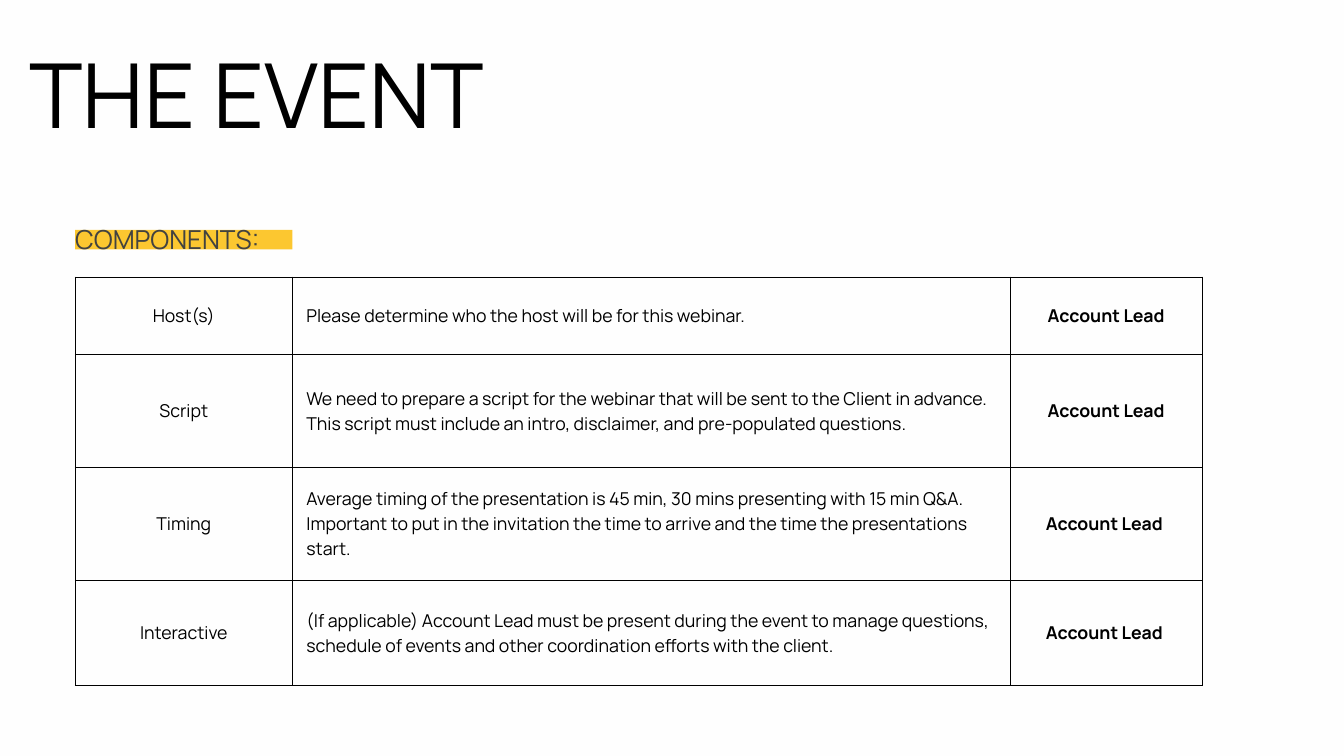
from dataclasses import dataclass

from lxml.etree import SubElement
from pptx import Presentation
from pptx.dml.color import RGBColor as Color
from pptx.enum.shapes import MSO_SHAPE as Shape
from pptx.enum.text import MSO_ANCHOR as Anchor, MSO_AUTO_SIZE as AutoSize, PP_ALIGN as Align
from pptx.oxml.ns import qn
from pptx.util import Emu, Pt

TITLE = "THE EVENT"
HEADING = "COMPONENTS:"
COMPONENTS = [
    ("Host(s)", "Please determine who the host will be for this webinar.", "Account Lead"),
    ("Script", "We need to prepare a script for the webinar that will be sent to the Client in advance. "
               "This script must include an intro, disclaimer, and pre-populated questions.", "Account Lead"),
    ("Timing", "Average timing of the presentation is 45 min, 30 mins presenting with 15 min Q&A. "
               "Important to put in the invitation the time to arrive and the time the presentations start.",
     "Account Lead "),
    ("Interactive", "(If applicable) Account Lead must be present during the event to manage questions, "
                    "schedule of events and other coordination efforts with the client.", "Account Lead "),
]


@dataclass(frozen=True)
class Theme:
    font: str = "Manrope"
    background: str = "FEFEFE"
    ink: str = "000000"
    heading_ink: str = "424240"
    highlight: str = "FCC730"
    title_size: float = 96
    title_leading: float = 105.6
    heading_size: float = 28
    heading_leading: float = 35
    cell_size: float = 19
    cell_leading: float = 26.6
    border: float = 0.75


THEME = Theme()

# Layout in px, 100 to the inch
PAGE_SIZE = (2000, 1125)
TITLE_BOX = (44, 71, 1062, 159)
TABLE_LEFT, TABLE_TOP = 112, 412
COLUMNS = [323, 1068, 286]
ROWS = [115, 168, 168, 157]
ALIGNMENTS = [Align.CENTER, Align.LEFT, Align.CENTER]
CELL_MARGIN = 21
HIGHLIGHT_BOX = (TABLE_LEFT, 342, COLUMNS[0], 29)
HEADING_BOX = (TABLE_LEFT, 331, sum(COLUMNS), 49)


def px(length):
    return Emu(length * 9144)


def place(shape, area):
    shape.left, shape.top, shape.width, shape.height = map(px, area)


def set_margins(owner, margin):
    owner.margin_left = owner.margin_top = owner.margin_right = owner.margin_bottom = px(margin)


def write(frame, text, size, leading, color, align=Align.LEFT, bold=False):
    para = frame.paragraphs[0]
    para.alignment = align
    para.line_spacing = Pt(leading)
    para.space_before = para.space_after = Pt(0)
    span = para.add_run()
    span.text = text
    font = span.font
    font.name, font.size, font.bold = THEME.font, Pt(size), bold
    font.color.rgb = Color.from_string(color)


def write_box(box, *content):
    """Write one line at the top left of a box without margins."""
    frame = box.text_frame
    frame.word_wrap = True
    frame.auto_size = AutoSize.NONE
    frame.vertical_anchor = Anchor.TOP
    set_margins(frame, 0)
    write(frame, *content)


def draw_borders(cell):
    properties = cell._tc.get_or_add_tcPr()
    for position, side in enumerate(("lnL", "lnR", "lnT", "lnB")):
        line = SubElement(properties, qn(f"a:{side}"), w=str(Pt(THEME.border)))
        fill = SubElement(line, qn("a:solidFill"))
        SubElement(fill, qn("a:srgbClr"), val=THEME.ink)
        properties.insert(position, line)


def add_components(page):
    area = (TABLE_LEFT, TABLE_TOP, sum(COLUMNS), sum(ROWS))
    table = page.shapes.add_table(len(ROWS), len(COLUMNS), *map(px, area)).table
    table.first_row = table.horz_banding = False
    for column, width in zip(table.columns, COLUMNS):
        column.width = px(width)
    for row, height, texts in zip(table.rows, ROWS, COMPONENTS):
        row.height = px(height)
        for index, (cell, text, align) in enumerate(zip(row.cells, texts, ALIGNMENTS)):
            cell.fill.background()
            cell.vertical_anchor = Anchor.MIDDLE
            set_margins(cell, CELL_MARGIN)
            draw_borders(cell)
            write(cell.text_frame, text, THEME.cell_size, THEME.cell_leading, THEME.ink,
                  align, bold=index == len(COLUMNS) - 1)


def add_heading(page):
    band = page.shapes.add_shape(Shape.RECTANGLE, *map(px, HIGHLIGHT_BOX))
    band.shadow.inherit = False
    band.fill.solid()
    band.fill.fore_color.rgb = Color.from_string(THEME.highlight)
    band.line.fill.background()
    box = page.shapes.add_textbox(*map(px, HEADING_BOX))
    write_box(box, HEADING, THEME.heading_size, THEME.heading_leading, THEME.heading_ink)


def main():
    deck = Presentation()
    deck.slide_width, deck.slide_height = map(px, PAGE_SIZE)
    page = deck.slides.add_slide(deck.slide_layouts.get_by_name("Title Only"))
    page.background.fill.solid()
    page.background.fill.fore_color.rgb = Color.from_string(THEME.background)
    add_components(page)
    add_heading(page)
    title = page.shapes.title
    place(title, TITLE_BOX)
    write_box(title, TITLE, THEME.title_size, THEME.title_leading, THEME.ink)
    deck.save("out.pptx")


if __name__ == "__main__":
    main()
